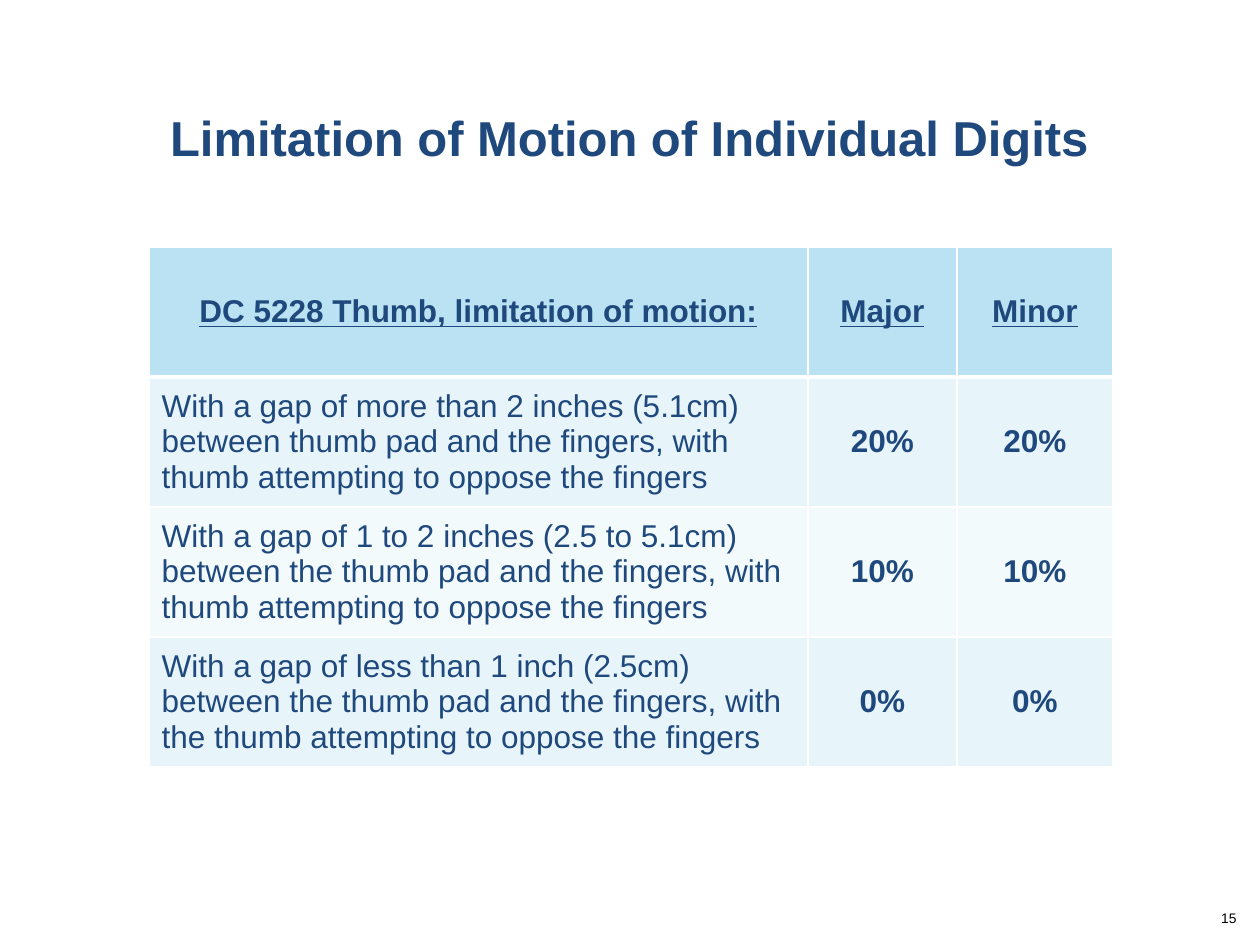
import pptx
import pptx.dml.color
import pptx.enum.text
import pptx.oxml
import pptx.oxml.ns
import pptx.util

EMU_PER_PX = 914400 // 126
FONT = "Arial"
NAVY, WHITE, BLACK = "1F497D", "FFFFFF", "000000"
HEADER_FILL = "BBE2F2"
BAND_FILLS = ["E7F4FA", "F3FAFC"]
LEFT = pptx.enum.text.PP_ALIGN.LEFT
CENTER = pptx.enum.text.PP_ALIGN.CENTER
RIGHT = pptx.enum.text.PP_ALIGN.RIGHT
TOP = pptx.enum.text.MSO_ANCHOR.TOP
MIDDLE = pptx.enum.text.MSO_ANCHOR.MIDDLE

COLUMN_WIDTHS = [659, 149, 156]
ROW_HEIGHT = 130
RATINGS = [
    ("DC 5228 Thumb, limitation of motion:", "Major", "Minor"),
    ("With a gap of more than 2 inches (5.1cm) between thumb pad and the "
     "fingers, with thumb attempting to oppose the fingers", "20%", "20%"),
    ("With a gap of 1 to 2 inches (2.5 to 5.1cm) between the thumb pad and the "
     "fingers, with thumb attempting to oppose the fingers", "10%", "10%"),
    ("With a gap of less than 1 inch (2.5cm) between the thumb pad and the "
     "fingers, with the thumb attempting to oppose the fingers", "0%", "0%"),
]


def px(n):
    return pptx.util.Emu(n * EMU_PER_PX)


def rgb(color):
    return pptx.dml.color.RGBColor.from_string(color)


def write_text(tf, text, size=18, color=NAVY, bold=False, underline=False, align=LEFT):
    p = tf.paragraphs[0]
    p.alignment = align
    r = p.add_run()
    r.text = text
    r.font.name = FONT
    r.font.size = pptx.util.Pt(size)
    r.font.color.rgb = rgb(color)
    r.font.bold = bold
    r.font.underline = underline


def add_text_box(slide, box, text, anchor=TOP, margin_top=0, **style):
    tf = slide.shapes.add_textbox(*map(px, box)).text_frame
    tf.word_wrap = True
    tf.vertical_anchor = anchor
    tf.margin_top = px(margin_top)
    write_text(tf, text, **style)


def add_border(cell, side, width):
    ns = pptx.oxml.ns.nsdecls("a")
    cell._tc.get_or_add_tcPr().append(pptx.oxml.parse_xml(
        f'<a:ln{side} {ns} w="{pptx.util.Pt(width)}"><a:solidFill>'
        f'<a:srgbClr val="{WHITE}"/></a:solidFill></a:ln{side}>'))


def format_cell(cell, text, row, col):
    header = row == 0
    widths = {"L": 1, "R": 1, "T": 3 if row == 1 else 1, "B": 3 if header else 1}
    for side, width in widths.items():
        add_border(cell, side, width)
    cell.fill.solid()
    cell.fill.fore_color.rgb = rgb(HEADER_FILL if header else BAND_FILLS[(row - 1) % 2])
    cell.vertical_anchor = MIDDLE
    write_text(cell.text_frame, text, bold=header or col > 0, underline=header,
               align=CENTER if header or col > 0 else LEFT)


def add_ratings_table(slide, left, top):
    table = slide.shapes.add_table(
        len(RATINGS), len(COLUMN_WIDTHS), px(left), px(top),
        px(sum(COLUMN_WIDTHS)), px(ROW_HEIGHT * len(RATINGS))).table
    for column, width in zip(table.columns, COLUMN_WIDTHS):
        column.width = px(width)
    for row, values in enumerate(RATINGS):
        table.rows[row].height = px(ROW_HEIGHT)
        for col, text in enumerate(values):
            format_cell(table.cell(row, col), text, row, col)


def main():
    prs = pptx.Presentation()
    prs.slide_width, prs.slide_height = pptx.util.Inches(10), pptx.util.Inches(7.5)
    slide = prs.slides.add_slide(prs.slide_layouts[6])
    add_text_box(slide, (10, 63, 1239, 147), "Limitation of Motion of Individual Digits",
                 anchor=MIDDLE, margin_top=6, size=28, bold=True, align=CENTER)
    add_text_box(slide, (955, 910, 294, 50), "15", size=7.9, color=BLACK, align=RIGHT)
    add_ratings_table(slide, 149, 247)
    prs.save("out.pptx")


if __name__ == "__main__":
    main()
